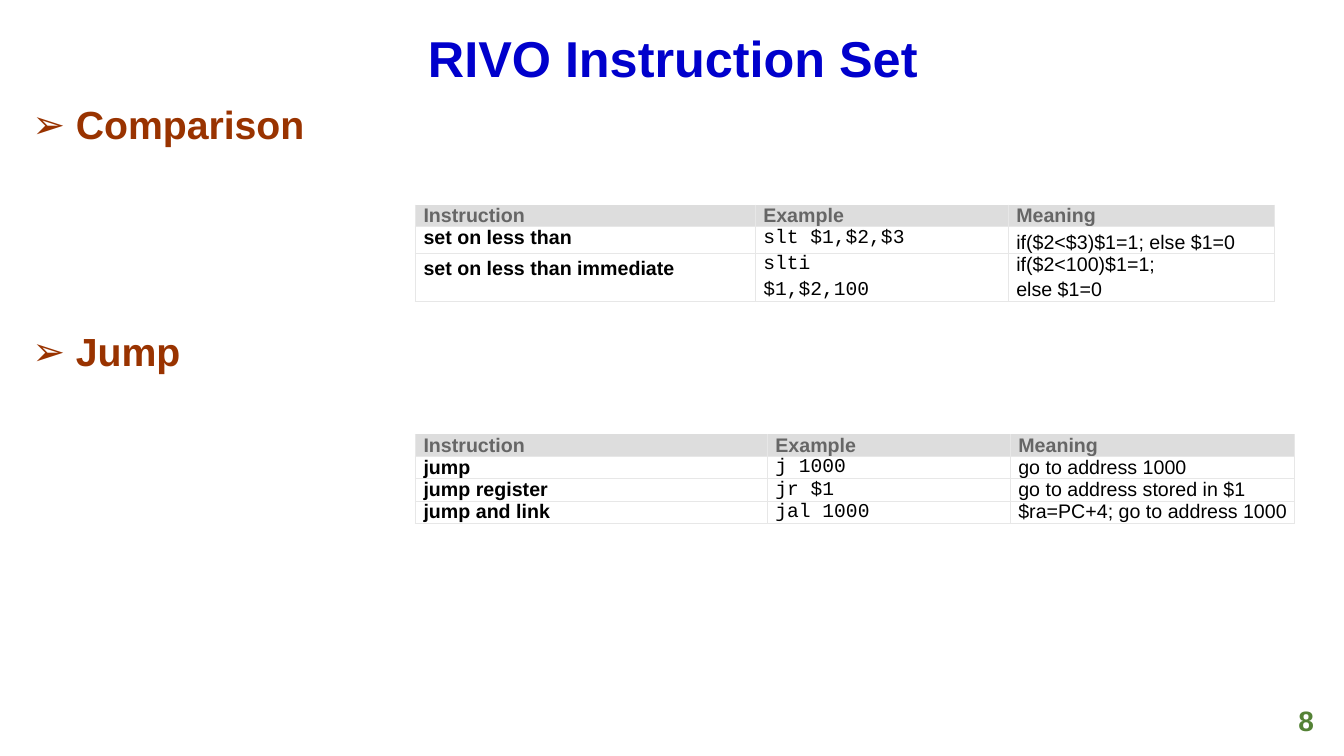
from dataclasses import dataclass

from lxml import etree
from pptx import Presentation
from pptx.dml.color import RGBColor
from pptx.enum.text import MSO_ANCHOR, MSO_AUTO_SIZE, PP_ALIGN
from pptx.oxml.ns import qn
from pptx.util import Emu, Inches, Pt

TOP, MIDDLE = MSO_ANCHOR.TOP, MSO_ANCHOR.MIDDLE
LEFT, CENTER, RIGHT = PP_ALIGN.LEFT, PP_ALIGN.CENTER, PP_ALIGN.RIGHT
NO_FIT = MSO_AUTO_SIZE.NONE
WIDE, HIGH = Inches(13.33), Inches(7.5)


@dataclass(frozen=True)
class Style:
    size: float
    color: str
    bold: bool = True
    font: str = "Arial"


@dataclass(frozen=True)
class Theme:
    title: Style = Style(36, "0000CC")
    topic: Style = Style(28, "993300")
    page: Style = Style(20, "548235")
    head: Style = Style(14, "666666")
    name: Style = Style(14, "000000")
    code: Style = Style(14, "000000", False, "Courier New")
    note: Style = Style(14, "000000", False)
    band: str = "DDDDDD"
    rule: str = "E7E7E7"


THEME = Theme()


@dataclass(frozen=True)
class Box:
    """A frame in percent of the slide's width and height."""
    left: float
    top: float
    width: float
    height: float


@dataclass(frozen=True)
class Grid:
    """A table; loose holds the (row, column) cells with wide line spacing."""
    top: float
    cols: tuple[float, ...]
    rows: tuple[float, ...]
    body: tuple[tuple[str, ...], ...]
    loose: tuple[tuple[int, int], ...] = ()


HEAD = ("Instruction", "Example", "Meaning")
EDGE, LINE = 30.91, 2.93
GRIDS = (
    Grid(27.07, (25.28, 18.83, 19.8), (LINE, 3.47, 6.4), (
        ("set on less than", "slt $1,$2,$3", "if($2<$3)$1=1; else $1=0"),
        ("set on less than immediate", "slti\n$1,$2,100",
         "if($2<100)$1=1;\nelse $1=0"),
    ), ((1, 2), (2, 0))),
    Grid(57.47, (26.18, 18.08, 21.15), (LINE,) * 4, (
        ("jump", "j 1000", "go to address 1000"),
        ("jump register", "jr $1", "go to address stored in $1"),
        ("jump and link", "jal 1000", "$ra=PC+4; go to address 1000"),
    )),
)


def across(share: float) -> Emu:
    return Emu(round(WIDE * share / 100))


def down(share: float) -> Emu:
    return Emu(round(HIGH * share / 100))


def place(shape, box: Box) -> None:
    shape.left, shape.top = across(box.left), down(box.top)
    shape.width, shape.height = across(box.width), down(box.height)


def paint(para, style: Style) -> None:
    for run in para.runs:
        run.font.size = Pt(style.size)
        run.font.name = style.font
        run.font.bold = style.bold
        run.font.color.rgb = RGBColor.from_string(style.color)


def write(frame, text: str, style: Style, align=LEFT, anchor=TOP) -> None:
    frame.text = text
    frame.word_wrap = True
    frame.auto_size = NO_FIT
    frame.vertical_anchor = anchor
    for para in frame.paragraphs:
        para.alignment = align
        paint(para, style)


def mark(para) -> None:
    """Give a paragraph a hanging arrow bullet."""
    props = para._p.get_or_add_pPr()
    props.set("marL", str(Inches(0.25)))
    props.set("indent", str(-Inches(0.25)))
    etree.SubElement(props, qn("a:buFont"), typeface="Arial")
    etree.SubElement(props, qn("a:buChar"), char="➢")


def outline(cell, head: bool) -> None:
    props = cell._tc.get_or_add_tcPr()
    for spot, side in enumerate(("lnL", "lnR", "lnT", "lnB")):
        faint = head and side == "lnT"
        line = etree.Element(qn(f"a:{side}"), w=str(Pt(0.12 if faint else 0.82)))
        fill = etree.SubElement(line, qn("a:solidFill"))
        etree.SubElement(fill, qn("a:srgbClr"),
                         val=THEME.band if faint else THEME.rule)
        props.insert(spot, line)


def fill_cell(cell, text: str, style: Style, head: bool, loose: bool) -> None:
    cell.margin_left = Inches(0.08)
    cell.margin_right = cell.margin_top = cell.margin_bottom = 0
    cell.text_frame.text = text
    for spot, para in enumerate(cell.text_frame.paragraphs):
        paint(para, style)
        if loose:
            para.line_spacing = 1.2
        if spot:
            para.space_before = Pt(2.4)
    if head:
        cell.fill.solid()
        cell.fill.fore_color.rgb = RGBColor.from_string(THEME.band)
    else:
        cell.fill.background()
    outline(cell, head)


def draw_grid(slide, grid: Grid) -> None:
    table = slide.shapes.add_table(
        len(grid.rows), len(grid.cols), across(EDGE), down(grid.top),
        across(sum(grid.cols)), down(sum(grid.rows))).table
    table.first_row = table.horz_banding = False
    for col, share in zip(table.columns, grid.cols):
        col.width = across(share)
    for row, share in zip(table.rows, grid.rows):
        row.height = down(share)
    kinds = (THEME.name, THEME.code, THEME.note)
    for r, texts in enumerate((HEAD, *grid.body)):
        for c, text in enumerate(texts):
            style = kinds[c] if r else THEME.head
            fill_cell(table.cell(r, c), text, style, r == 0, (r, c) in grid.loose)


def main() -> None:
    deck = Presentation()
    deck.slide_width, deck.slide_height = WIDE, HIGH
    slide = deck.slides.add_slide(deck.slide_layouts[1])

    # Title
    title = slide.shapes.title
    place(title, Box(1.65, 2.93, 96.85, 10.4))
    write(title.text_frame, "RIVO Instruction Set", THEME.title, CENTER, MIDDLE)
    title.text_frame.paragraphs[0].line_spacing = 0.9

    # Topics, spaced to leave room for the tables
    body = slide.placeholders[1]
    place(body, Box(1.65, 13.33, 96.85, 76.67))
    write(body.text_frame, " Comparison\n Jump", THEME.topic)
    for para, gap in zip(body.text_frame.paragraphs, (10, 132)):
        para.line_spacing = 0.9
        para.space_before = Pt(gap)
        mark(para)

    # Page number
    page = slide.shapes.add_textbox(0, 0, 0, 0)
    place(page, Box(76, 92.67, 22.5, 5.33))
    write(page.text_frame, "8", THEME.page, RIGHT, MIDDLE)

    # Instruction tables
    for grid in GRIDS:
        draw_grid(slide, grid)

    deck.save("out.pptx")


if __name__ == "__main__":
    main()
